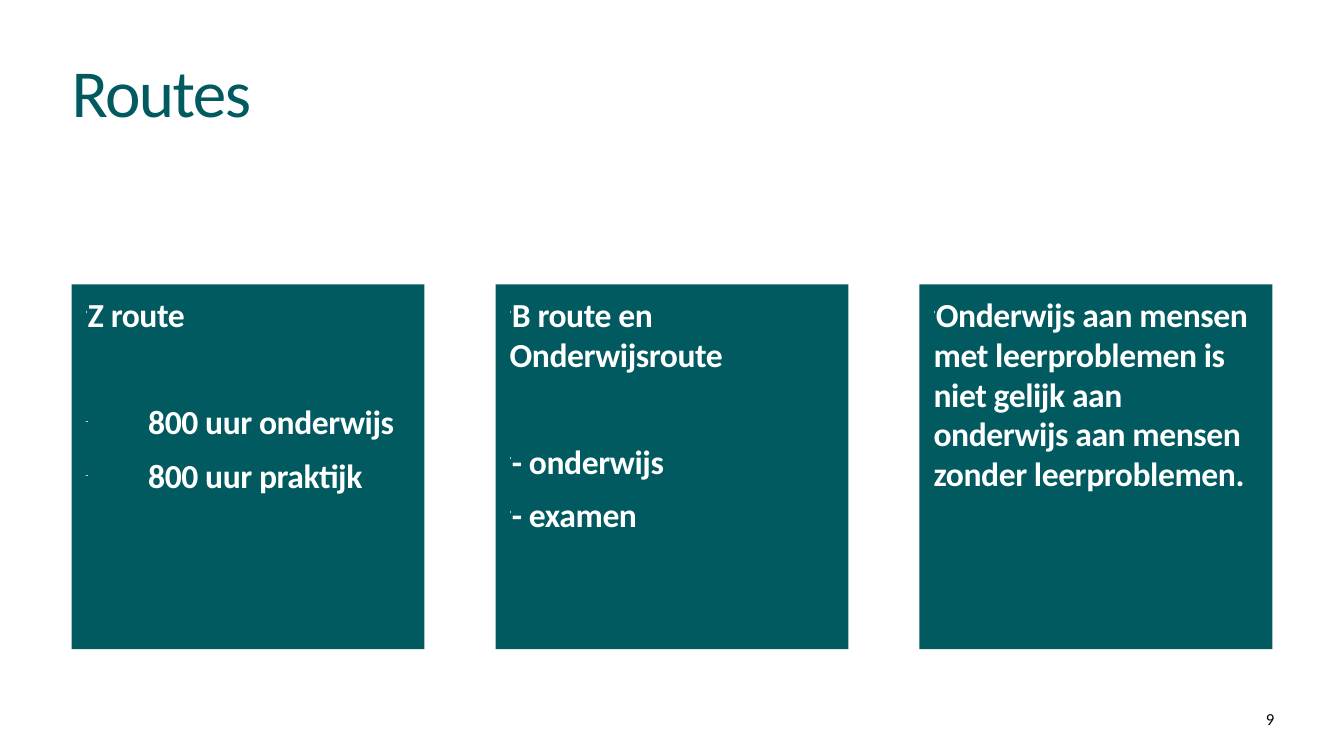
from dataclasses import dataclass

from lxml import etree
from pptx import Presentation
from pptx import util as u
from pptx.dml.color import RGBColor
from pptx.enum import shapes, text
from pptx.oxml.ns import qn

TITLE = "Routes"
PAGE_NUMBER = "9"
CARDS = [
    {"heading": "Z route", "bullet": "-", "indent": 0.62,
     "items": ["800 uur onderwijs", "800 uur praktijk"]},
    {"heading": "B route en Onderwijsroute", "bullet": "'", "indent": 0,
     "items": ["- onderwijs", "- examen"]},
    {"heading": "Onderwijs aan mensen met leerproblemen is niet gelijk aan "
                "onderwijs aan mensen zonder leerproblemen.",
     "bullet": "'", "indent": 0, "items": []},
]


@dataclass(frozen=True)
class Theme:
    font: str = "Calibri"
    teal: str = "005A5F"
    white: str = "FFFFFF"
    black: str = "000000"
    title_size: int = 48
    card_size: int = 24
    number_size: int = 12


THEME = Theme()
LEFT, CARD_TOP, CARD_WIDTH, CARD_HEIGHT = 0.71, 2.82, 3.5, 3.62
CARD_STEP = 4.205
ITEM_GAP, HEADING_GAP = 10, 48


def set_frame(frame, insets):
    frame.word_wrap = True
    frame.auto_size = text.MSO_AUTO_SIZE.NONE
    frame.vertical_anchor = text.MSO_ANCHOR.TOP
    (frame.margin_left, frame.margin_top,
     frame.margin_right, frame.margin_bottom) = map(u.Inches, insets)


def add_span(para, words, size, color, bold=False, spacing=0):
    span = para.add_run()
    span.text = words
    span.font.name = THEME.font
    span.font.size = u.Pt(size)
    span.font.bold = bold
    span.font.color.rgb = RGBColor.from_string(color)
    if spacing:
        span.font._element.set("spc", str(spacing))


def add_bullet(para, character, indent):
    props = para._p.get_or_add_pPr()
    props.set("marL", str(u.Inches(indent)))
    props.set("indent", str(-u.Inches(indent)))
    color = etree.SubElement(props, qn("a:buClr"))
    etree.SubElement(color, qn("a:srgbClr"), val=THEME.white)
    etree.SubElement(props, qn("a:buSzPct"), val="25000")
    etree.SubElement(props, qn("a:buChar"), char=character)


def add_label(page, place, words, size, color, spacing=0, line=1.0,
              align=text.PP_ALIGN.LEFT):
    box = page.shapes.add_textbox(*map(u.Inches, place))
    set_frame(box.text_frame, (0, 0, 0, 0))
    para = box.text_frame.paragraphs[0]
    para.alignment = align
    para.line_spacing = line
    add_span(para, words, size, color, spacing=spacing)


def add_card(page, left, card):
    box = page.shapes.add_shape(
        shapes.MSO_SHAPE.RECTANGLE,
        *map(u.Inches, (left, CARD_TOP, CARD_WIDTH, CARD_HEIGHT)))
    box.shadow.inherit = False
    box.fill.solid()
    box.fill.fore_color.rgb = RGBColor.from_string(THEME.teal)
    box.line.fill.background()
    frame = box.text_frame
    set_frame(frame, (0.14, 0.12, 0.12, 0.08))
    lines = [(card["heading"], "'", 0, HEADING_GAP)]
    lines += [(item, card["bullet"], card["indent"], ITEM_GAP)
              for item in card["items"]]
    for index, (words, bullet, indent, gap) in enumerate(lines):
        para = frame.add_paragraph() if index else frame.paragraphs[0]
        add_bullet(para, bullet, indent)
        para.alignment = text.PP_ALIGN.LEFT
        para.line_spacing = 0.98
        para.space_after = u.Pt(gap)
        add_span(para, words, THEME.card_size, THEME.white, True, -30)


def main():
    deck = Presentation()
    deck.slide_width, deck.slide_height = u.Inches(13.33), u.Inches(7.5)
    page = deck.slides.add_slide(deck.slide_layouts[6])
    add_label(page, (LEFT, 0.59, 10.97, 0.73), TITLE, THEME.title_size,
              THEME.teal, spacing=-110, line=0.9)
    for index, card in enumerate(CARDS):
        add_card(page, LEFT + index * CARD_STEP, card)
    add_label(page, (12.1, 7.03, 0.54, 0.2), PAGE_NUMBER, THEME.number_size,
              THEME.black, align=text.PP_ALIGN.RIGHT)
    deck.save("out.pptx")


if __name__ == "__main__":
    main()
